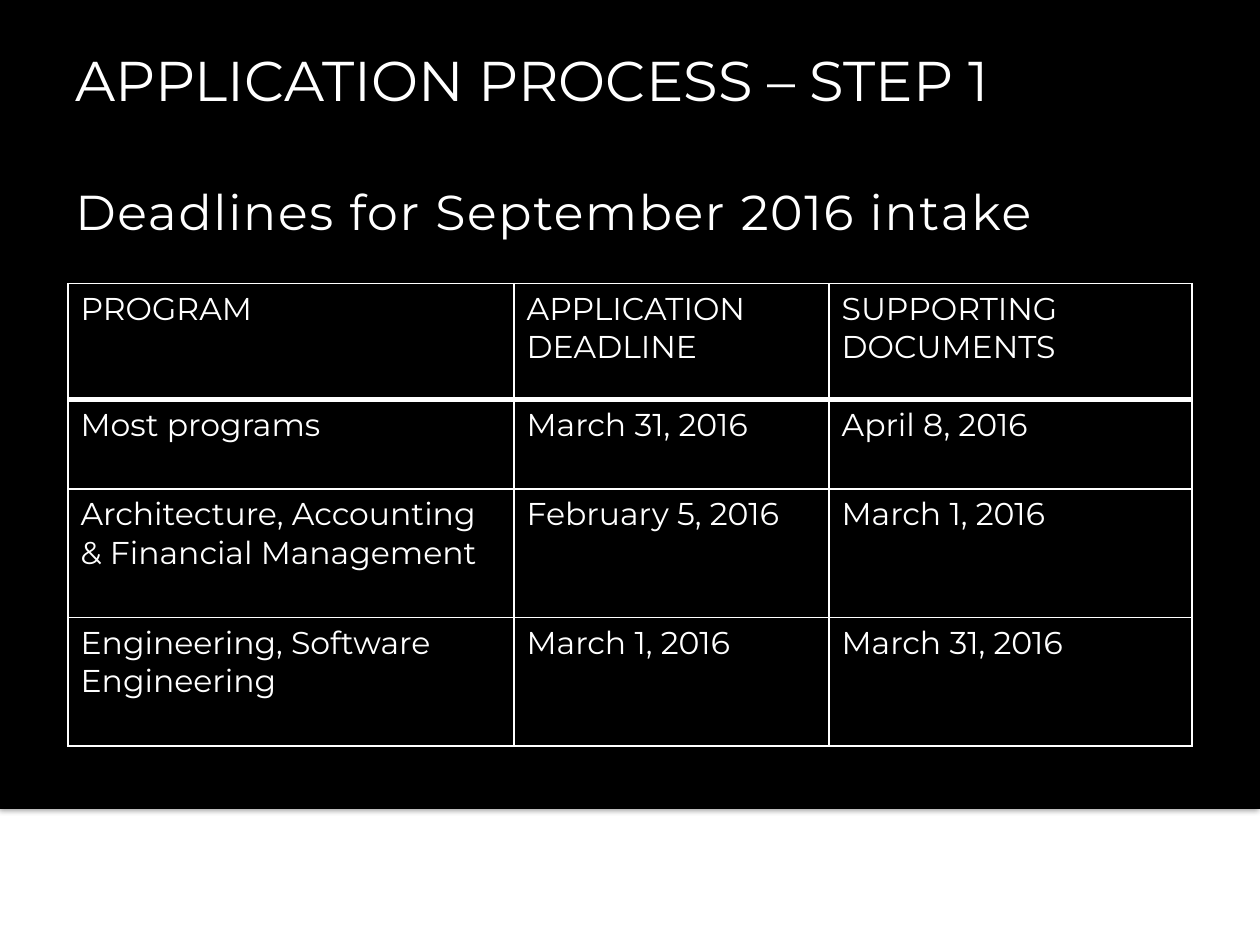
from lxml import etree
from pptx import Presentation
from pptx.dml.color import RGBColor
from pptx.enum.shapes import MSO_SHAPE
from pptx.oxml import parse_xml
from pptx.oxml.ns import nsdecls, qn
from pptx.util import Inches, Pt

RECT = MSO_SHAPE.RECTANGLE
FONT = "Montserrat"
BLACK, WHITE = "000000", "FFFFFF"
COLUMNS = [3.54, 2.5, 2.88]
ROWS = [0.92, 0.71, 1.02, 1.02]
DEADLINES = [
    ["PROGRAM", "APPLICATION DEADLINE", "SUPPORTING DOCUMENTS"],
    ["Most programs", "March 31, 2016", "April 8, 2016"],
    ["Architecture, Accounting & Financial Management", "February 5, 2016", "March 1, 2016"],
    ["Engineering, Software Engineering", "March 1, 2016", "March 31, 2016"],
]


def paint(fmt, color):
    fmt.solid()
    fmt.fore_color.rgb = RGBColor.from_string(color)


def set_font(p, size):
    p.font.name = FONT
    p.font.size = Pt(size)
    paint(p.font.fill, WHITE)


def add_panel(s, width, height):
    sp = s.shapes.add_shape(RECT, 0, 0, width, height)
    paint(sp.fill, BLACK)
    sp.line.fill.background()
    sp.shadow.inherit = False
    effects = sp.element.spPr.find(qn("a:effectLst"))
    effects.append(parse_xml(
        f'<a:outerShdw {nsdecls("a")} blurRad="{Pt(3.1)}" dist="{Pt(1.8)}" dir="5400000" '
        f'rotWithShape="0"><a:srgbClr val="{BLACK}"><a:alpha val="35000"/></a:srgbClr></a:outerShdw>'))


def add_text(s, text, top, height, size, spacing=0):
    sp = s.shapes.add_textbox(Inches(0.5), Inches(top), Inches(9), Inches(height))
    tf = sp.text_frame
    tf.word_wrap = True
    p = tf.paragraphs[0]
    r = p.add_run()
    r.text = text
    set_font(p, size)
    if spacing:
        r.font._element.set("spc", str(spacing * 100))


def add_border(cell, side, width):
    tcPr = cell._tc.get_or_add_tcPr()
    ln = etree.SubElement(tcPr, qn(f"a:ln{side}"), w=str(Pt(width)))
    fill = etree.SubElement(ln, qn("a:solidFill"))
    etree.SubElement(fill, qn("a:srgbClr"), val=WHITE)


def add_deadlines(s, left, top):
    frame = s.shapes.add_table(len(ROWS), len(COLUMNS), Inches(left), Inches(top),
                               Inches(sum(COLUMNS)), Inches(sum(ROWS)))
    table = frame.table
    table.first_row = table.horz_banding = False
    for column, width in zip(table.columns, COLUMNS):
        column.width = Inches(width)
    for i, (row, height, texts) in enumerate(zip(table.rows, ROWS, DEADLINES)):
        row.height = Inches(height)
        widths = {"L": 1, "R": 1, "T": 3 if i == 1 else 1, "B": 3 if i == 0 else 1}
        for cell, text in zip(row.cells, texts):
            cell.text = text
            set_font(cell.text_frame.paragraphs[0], 18)
            for side, width in widths.items():
                add_border(cell, side, width)
            paint(cell.fill, BLACK)


def main():
    prs = Presentation()
    prs.slide_width, prs.slide_height = Inches(10), Inches(7.5)
    s = prs.slides.add_slide(prs.slide_layouts[6])
    add_panel(s, prs.slide_width, Inches(6.42))
    add_text(s, "APPLICATION PROCESS – STEP 1", 0.31, 1.25, 32)
    add_text(s, "Deadlines for September 2016 intake", 1.39, 0.77, 28, spacing=1)
    add_deadlines(s, 0.54, 2.25)
    prs.save("out.pptx")


if __name__ == "__main__":
    main()
